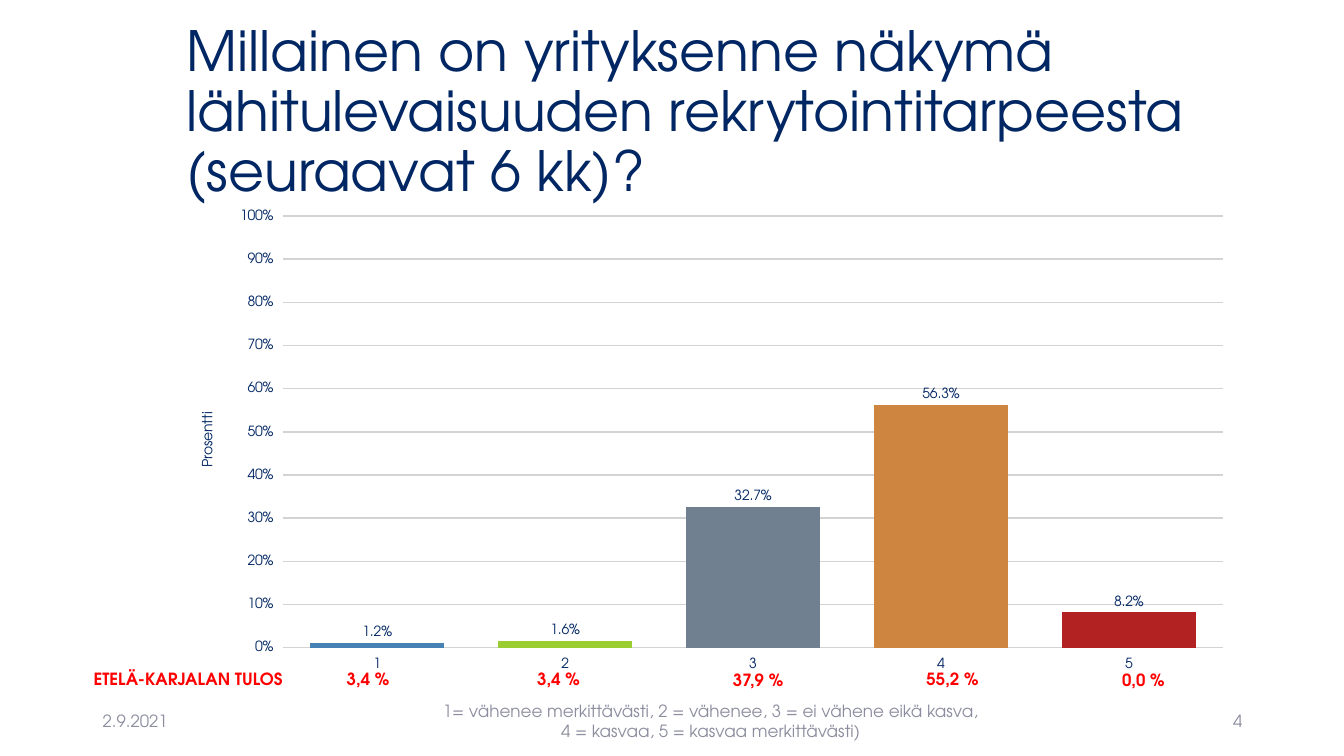
from dataclasses import dataclass
from lxml.etree import SubElement
from pptx import Presentation
from pptx.chart.data import CategoryChartData
from pptx.dml.color import RGBColor
from pptx.enum.chart import XL_CHART_TYPE, XL_LABEL_POSITION, XL_TICK_MARK
from pptx.enum.text import MSO_ANCHOR, PP_ALIGN
from pptx.oxml.ns import qn
from pptx.util import Inches, Pt


@dataclass(frozen=True)
class Theme:
    """Colours, font and type sizes of the slide."""
    face: str = "TeX Gyre Adventor"
    navy: str = "002663"
    gray: str = "8C8E9F"
    red: str = "FF0000"
    grid: str = "D3D3D3"
    bars: tuple = ("4682B4", "9ACD32", "708090", "CD853F", "B22222")
    title: float = 39.6
    note: float = 12
    axis: float = 10


THEME = Theme()


def style(font, size, color, bold=False):
    """Set face, size, colour and weight of a font."""
    font.name = THEME.face
    font.size = Pt(size)
    font.bold = bold
    font.color.rgb = RGBColor.from_string(color)


def add_text(slide, box, lines, size, color, bold=False,
             align=PP_ALIGN.LEFT, anchor=MSO_ANCHOR.MIDDLE, gap=1.0):
    """Add a wrapped text box with one paragraph per line."""
    frame = slide.shapes.add_textbox(*map(Inches, box)).text_frame
    frame.word_wrap = True
    frame.vertical_anchor = anchor
    frame.text = "\n".join(lines)
    for para in frame.paragraphs:
        para.alignment = align
        para.line_spacing = gap
        style(para.font, size, color, bold)


def place_plot(chart, frame):
    """Fix the inner plot area as fractions of the chart."""
    plot = chart.plots[0]._element.getparent()
    old = plot.find(qn("c:layout"))
    if old is not None:
        plot.remove(old)
    layout = SubElement(plot, qn("c:layout"))
    plot.insert(0, layout)
    manual = SubElement(layout, qn("c:manualLayout"))
    names = ("layoutTarget", "xMode", "yMode", "x", "y", "w", "h")
    for name, val in zip(names, ("inner", "edge", "edge", *frame)):
        SubElement(manual, qn(f"c:{name}")).set("val", str(val))


def style_axis(axis):
    """Set tick marks and labels of an axis and hide its line."""
    axis.major_tick_mark = XL_TICK_MARK.OUTSIDE
    axis.minor_tick_mark = XL_TICK_MARK.NONE
    axis.format.line.fill.background()
    style(axis.tick_labels.font, THEME.axis, THEME.navy)


def add_bars(slide, box, vals):
    """Add the column chart of answer shares."""
    data = CategoryChartData(number_format="0.0%")
    data.categories = [str(n) for n in range(1, len(vals) + 1)]
    data.add_series("Series 1", vals)
    chart = slide.shapes.add_chart(
        XL_CHART_TYPE.COLUMN_CLUSTERED, *map(Inches, box), data).chart
    chart.has_legend = False
    chart.has_title = False
    style(chart.font, 18, THEME.navy)
    place_plot(chart, (0.1, 0.03, 0.88, 0.9))

    style_axis(chart.category_axis)
    axis = chart.value_axis
    style_axis(axis)
    axis.minimum_scale, axis.maximum_scale, axis.major_unit = 0, 1, 0.1
    axis.tick_labels.number_format = "0%"
    axis.tick_labels.number_format_is_linked = False
    line = axis.major_gridlines.format.line
    line.width = Pt(1)
    line.color.rgb = RGBColor.from_string(THEME.grid)
    head = axis.axis_title.text_frame
    head.text = "Prosentti"
    style(head.paragraphs[0].font, THEME.axis, THEME.navy)

    plot = chart.plots[0]
    plot.gap_width = 40
    plot.vary_by_categories = False
    plot.has_data_labels = True
    labels = plot.data_labels
    labels.show_value = True
    labels.number_format = "0.0%"
    labels.number_format_is_linked = False
    labels.position = XL_LABEL_POSITION.OUTSIDE_END
    style(labels.font, THEME.axis, THEME.navy)
    for i, color in enumerate(THEME.bars):
        fill = plot.series[0].points[i].format.fill
        fill.solid()
        fill.fore_color.rgb = RGBColor.from_string(color)


def add_result(slide, left, top, width, text):
    """Add one red regional result under the chart."""
    add_text(slide, (left, top, width, 0.3), [text], THEME.note, THEME.red,
             bold=True, anchor=MSO_ANCHOR.TOP)


def main():
    """Build and save the slide."""
    deck = Presentation()
    deck.slide_width, deck.slide_height = Inches(13.33), Inches(7.5)
    slide = deck.slides.add_slide(deck.slide_layouts[6])
    add_text(slide, (1.75, 0.4, 10.59, 1.45),
             ["Millainen on yrityksenne näkymä lähitulevaisuuden "
              "rekrytointitarpeesta (seuraavat 6 kk)?"],
             THEME.title, THEME.navy, gap=0.9)
    scale = ["1= vähenee merkittävästi, 2 = vähenee, 3 = ei vähene eikä kasva,",
             "4 = kasvaa, 5 = kasvaa merkittävästi)"]
    for left, width, lines, align in (
            (0.92, 3, ["2.9.2021"], PP_ALIGN.LEFT),
            (3.77, 6.56, scale, PP_ALIGN.CENTER),
            (9.42, 3, ["4"], PP_ALIGN.RIGHT)):
        add_text(slide, (left, 6.95, width, 0.4), lines,
                 THEME.note, THEME.gray, align=align)
    add_bars(slide, (1.75, 2, 10.59, 4.76), (0.012, 0.016, 0.327, 0.563, 0.082))
    for result in (
            (0.83, 6.59, 2.14, "ETELÄ-KARJALAN TULOS"),
            (3.34, 6.59, 0.65, "3,4 %"),
            (5.23, 6.59, 0.65, "3,4 %"),
            (7.17, 6.6, 0.81, "37,9 %"),
            (9.09, 6.59, 0.81, "55,2 %"),
            (11.03, 6.6, 0.81, "0,0 %")):
        add_result(slide, *result)
    deck.save("out.pptx")


if __name__ == "__main__":
    main()
